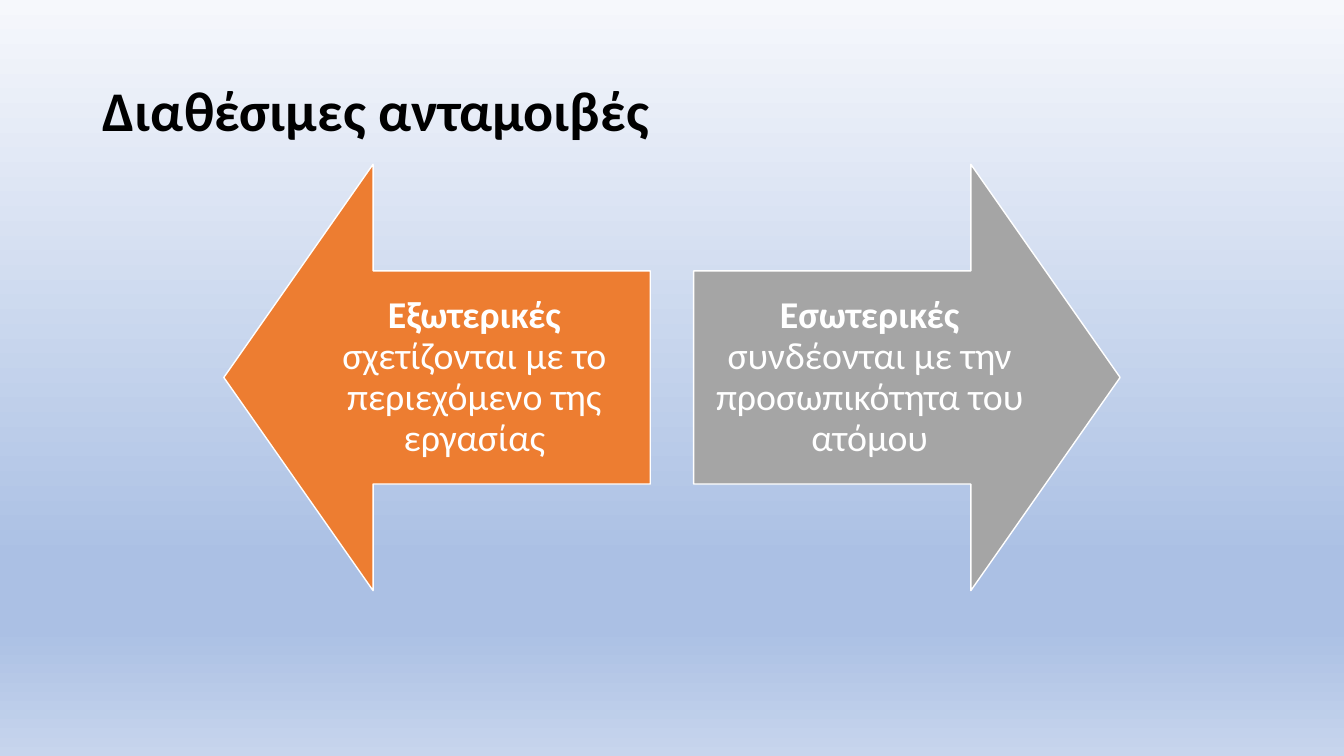
from copy import deepcopy

from pptx import Presentation
from pptx.dml.color import RGBColor
from pptx.enum.shapes import MSO_SHAPE
from pptx.enum.text import MSO_ANCHOR, PP_ALIGN
from pptx.oxml.ns import qn
from pptx.util import Inches, Pt

BLACK = RGBColor(0x00, 0x00, 0x00)
WHITE = RGBColor(0xFF, 0xFF, 0xFF)
ORANGE = RGBColor(0xED, 0x7D, 0x31)
GRAY = RGBColor(0xA5, 0xA5, 0xA5)
PALE = RGBColor(0xF6, 0xF8, 0xFC)
BLUE = RGBColor(0xAB, 0xC0, 0xE4)
MIST = RGBColor(0xC7, 0xD5, 0xED)


class Deck:
    """Hold the style and the current slide, and draw each kind of element."""

    def __init__(self, show):
        self.font = "Calibri"
        self.slide = show.slides.add_slide(show.slide_layouts[6])

    def back(self, stops):
        fill = self.slide.background.fill
        fill.gradient()
        fill.gradient_angle = 270
        items = self.slide.element.find(".//" + qn("a:gsLst"))
        while len(items) < len(stops):
            items.append(deepcopy(items[0]))
        for stop, (place, color) in zip(fill.gradient_stops, stops):
            stop.position = place
            stop.color.rgb = color

    def text(self, box, runs, size, color, align, inset):
        frame = self.slide.shapes.add_textbox(*map(Inches, box)).text_frame
        frame.word_wrap = True
        frame.vertical_anchor = MSO_ANCHOR.MIDDLE
        frame.margin_left = frame.margin_right = Inches(inset[0])
        frame.margin_top = frame.margin_bottom = Inches(inset[1])
        para = frame.paragraphs[0]
        para.alignment = align
        para.line_spacing = 0.9
        for words, bold in runs:
            run = para.add_run()
            run.text = words
            run.font.name = self.font
            run.font.size = Pt(size)
            run.font.bold = bold
            run.font.color.rgb = color

    def arrow(self, kind, box, color):
        shape = self.slide.shapes.add_shape(kind, *map(Inches, box))
        shape.shadow.inherit = False
        shape.adjustments[0] = 0.5
        shape.adjustments[1] = 0.35
        shape.fill.solid()
        shape.fill.fore_color.rgb = color
        shape.line.color.rgb = WHITE
        shape.line.width = Pt(1)


def main():
    show = Presentation()
    show.slide_width = Inches(13.33)
    show.slide_height = Inches(7.5)
    deck = Deck(show)
    deck.back([(0, PALE), (0.74, BLUE), (0.83, BLUE), (1, MIST)])
    deck.text((0.92, 0.4, 11.5, 1.45), [("Διαθέσιμες ανταμοιβές", True)],
              40, BLACK, PP_ALIGN.LEFT, (0.1, 0.05))
    sides = [
        (MSO_SHAPE.LEFT_ARROW, 2.22, 2.96, ORANGE, "Εξωτερικές ",
         "σχετίζονται με το περιεχόμενο της εργασίας"),
        (MSO_SHAPE.RIGHT_ARROW, 6.88, 6.88, GRAY, "Εσωτερικές ",
         "συνδέονται με την προσωπικότητα του ατόμου"),
    ]
    for kind, left, inner, color, head, body in sides:
        deck.arrow(kind, (left, 1.63, 4.23, 4.23), color)
        deck.text((inner, 2.69, 3.49, 2.12), [(head, True), (body, False)],
                  27, WHITE, PP_ALIGN.CENTER, (0.21, 0.21))
    show.save("out.pptx")


if __name__ == "__main__":
    main()
